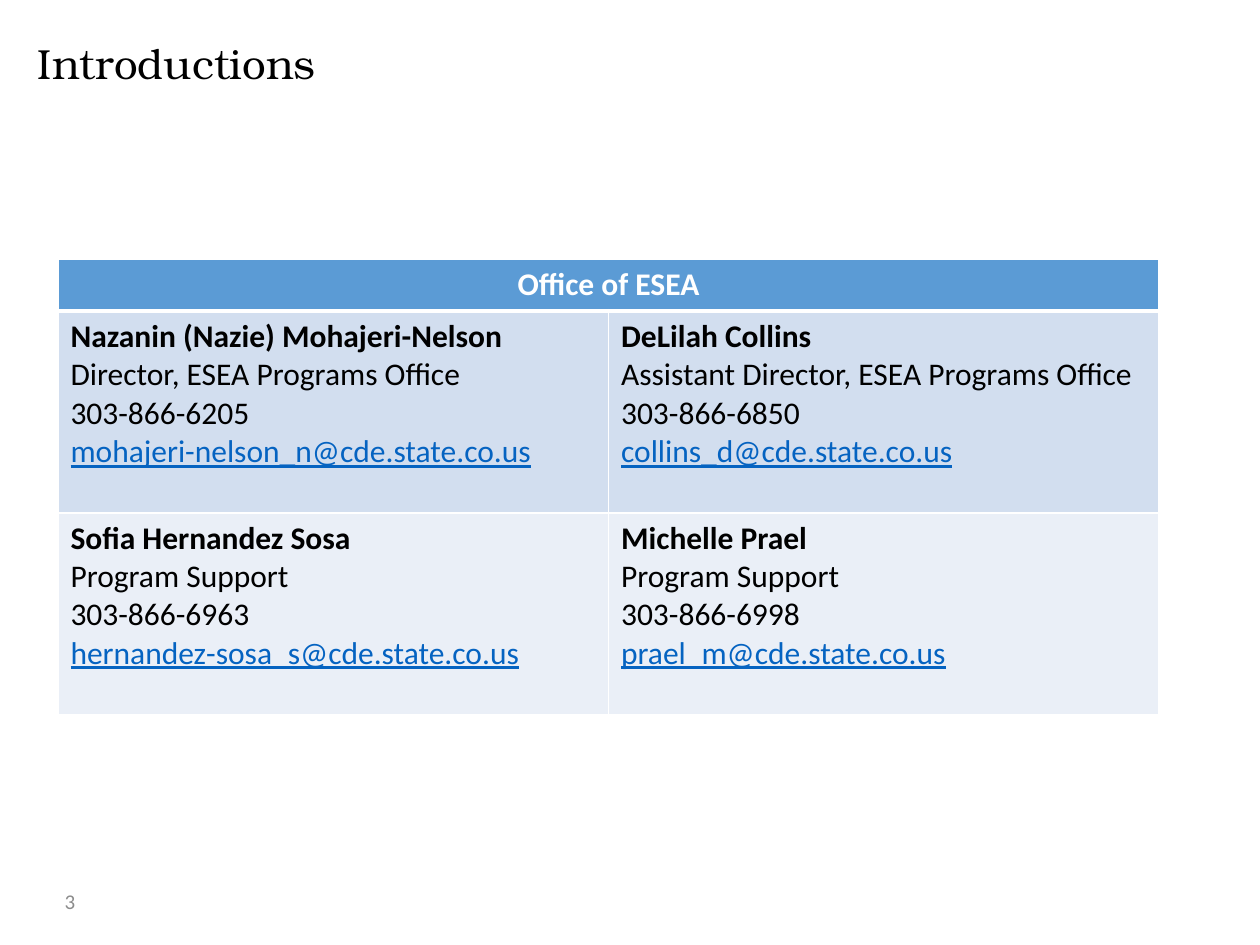
"""Build the Introductions slide with the contact table of the Office of ESEA."""
from lxml.etree import SubElement
from pptx import Presentation
from pptx.dml.color import RGBColor
from pptx.enum.text import MSO_ANCHOR as Anchor, PP_ALIGN as Align
from pptx.oxml.ns import qn
from pptx.util import Inches, Pt

TITLE = "Introductions"
PAGE_NUMBER = "3"
HEADING = "Office of ESEA"
CONTACTS = [
    [
        ("Nazanin (Nazie) Mohajeri-Nelson", "Director, ESEA Programs Office",
         "303-866-6205", "mohajeri-nelson_n@cde.state.co.us"),
        ("DeLilah Collins", "Assistant Director, ESEA Programs Office",
         "303-866-6850", "collins_d@cde.state.co.us"),
    ],
    [
        ("Sofia Hernandez Sosa", "Program Support",
         "303-866-6963", "hernandez-sosa_s@cde.state.co.us"),
        ("Michelle Prael", "Program Support",
         "303-866-6998", "prael_m@cde.state.co.us"),
    ],
]

COLORS = {"black": "000000", "white": "FFFFFF", "gray": "8C8C8C", "link": "0563C1",
          "header": "5B9BD5", "odd": "D2DEEF", "even": "EAEFF7"}
WIDTH, HEIGHT = 10, 7.5
TABLE_LEFT, TABLE_TOP, TABLE_WIDTH = 0.46, 2.06, 8.74
ROW_HEIGHTS = [0.41, 1.6, 1.6]

BODY = {"name": "Calibri", "size": Pt(18), "bold": False, "color": "black"}
NAME = {**BODY, "bold": True}
LINK = {**BODY, "underline": True, "color": "link"}
HEADER = {**NAME, "color": "white"}
TITLE_FONT = {"name": "TeX Gyre Bonum", "size": Pt(24), "color": "black"}
NUMBER_FONT = {"name": "Calibri", "size": Pt(12), "color": "gray"}


def rgb(color):
    return RGBColor.from_string(COLORS[color])


def add_span(para, text, style):
    span = para.add_run()
    span.text = text
    for key, value in style.items():
        if key == "color":
            span.font.color.rgb = rgb(value)
        else:
            setattr(span.font, key, value)


def add_text(page, area, text, style, settings, align):
    frame = page.shapes.add_textbox(*map(Inches, area)).text_frame
    for key, value in {"word_wrap": True, **settings}.items():
        setattr(frame, key, value)
    frame.paragraphs[0].alignment = align
    add_span(frame.paragraphs[0], text, style)


def style_cell(cell, fill, top, bottom):
    props = cell._tc.get_or_add_tcPr()
    for side, points in {"L": 1, "R": 1, "T": top, "B": bottom}.items():
        line = SubElement(props, qn(f"a:ln{side}"), w=str(Pt(points)))
        solid = SubElement(line, qn("a:solidFill"))
        SubElement(solid, qn("a:srgbClr"), val=COLORS["white"])
    cell.fill.solid()
    cell.fill.fore_color.rgb = rgb(fill)


def fill_contact(cell, contact):
    para = cell.text_frame.paragraphs[0]
    for index, (text, style) in enumerate(zip(contact, (NAME, BODY, BODY, LINK))):
        if index:
            para.add_line_break()
        add_span(para, text, style)


def add_contacts(page):
    columns = len(CONTACTS[0])
    area = (TABLE_LEFT, TABLE_TOP, TABLE_WIDTH, sum(ROW_HEIGHTS))
    table = page.shapes.add_table(len(ROW_HEIGHTS), columns, *map(Inches, area)).table
    for column in table.columns:
        column.width = Inches(TABLE_WIDTH / columns)
    for row, height in zip(table.rows, ROW_HEIGHTS):
        row.height = Inches(height)

    for column in range(columns):
        style_cell(table.cell(0, column), "header", 1, 3)
    heading = table.cell(0, 0)
    heading.merge(table.cell(0, columns - 1))
    para = heading.text_frame.paragraphs[0]
    para.alignment = Align.CENTER
    add_span(para, HEADING, HEADER)

    for row, contacts in enumerate(CONTACTS, 1):
        for column, contact in enumerate(contacts):
            cell = table.cell(row, column)
            style_cell(cell, "odd" if row % 2 else "even", 3 if row == 1 else 1, 1)
            fill_contact(cell, contact)


def main():
    deck = Presentation()
    deck.slide_width, deck.slide_height = Inches(WIDTH), Inches(HEIGHT)
    page = deck.slides.add_slide(deck.slide_layouts[6])
    no_margins = dict.fromkeys(
        ("margin_left", "margin_top", "margin_right", "margin_bottom"), 0)
    add_text(page, (0.3, 0.3, 8.62, 0.78), TITLE, TITLE_FONT, no_margins, Align.LEFT)
    add_text(page, (0.3, 6.95, 0.51, 0.4), PAGE_NUMBER, NUMBER_FONT,
             {"vertical_anchor": Anchor.MIDDLE}, Align.CENTER)
    add_contacts(page)
    deck.save("out.pptx")


if __name__ == "__main__":
    main()
